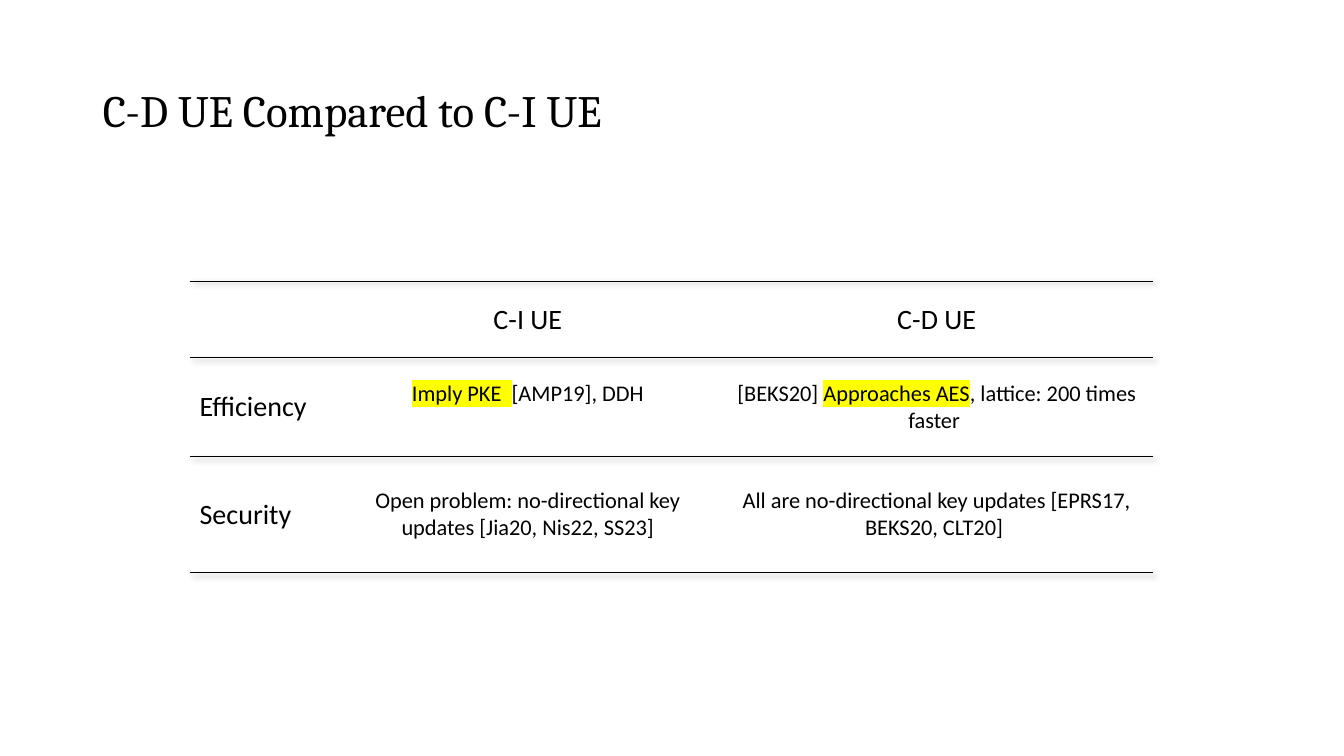
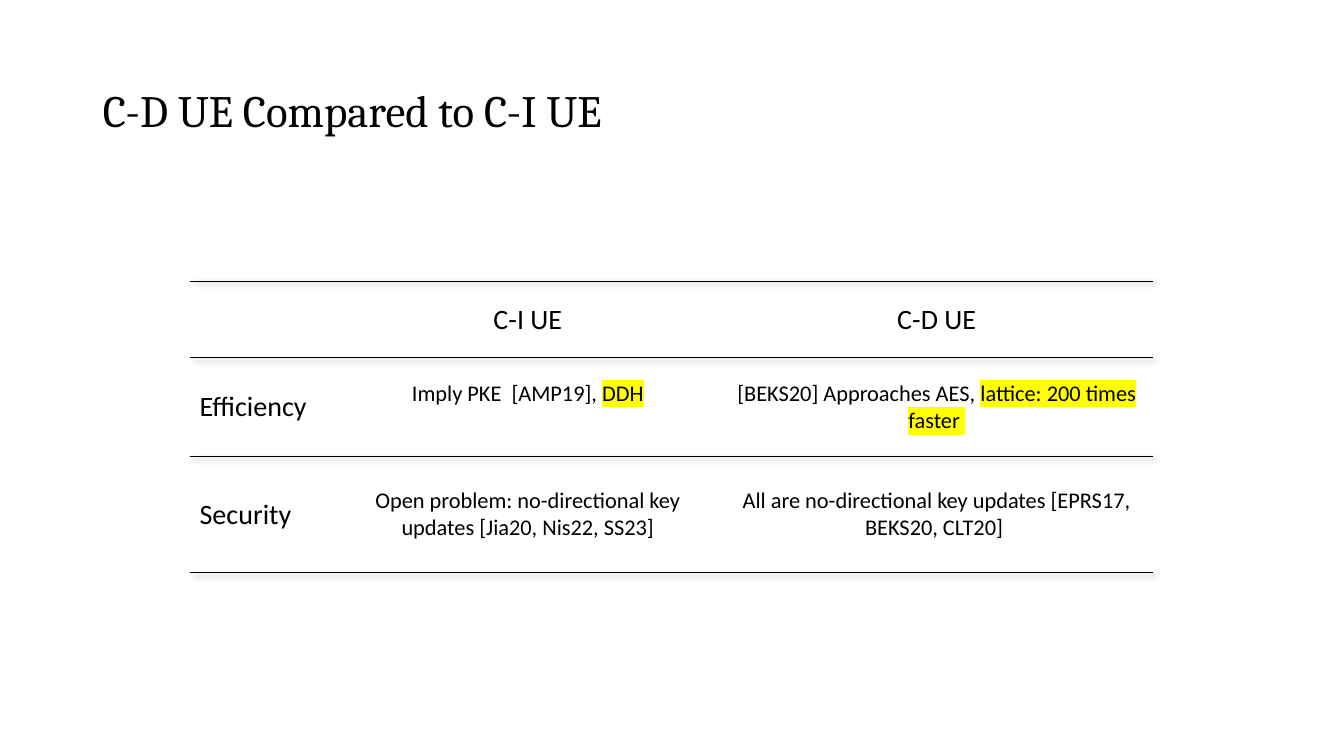
"""Build two slides comparing C-D UE with C-I UE, each with its own highlights."""
from lxml.etree import SubElement
from pptx import Presentation
from pptx.dml.color import RGBColor
from pptx.enum.text import MSO_ANCHOR as Anchor, PP_ALIGN as Align
from pptx.oxml import parse_xml
from pptx.oxml.ns import nsdecls, qn
from pptx.util import Inches, Pt

BLACK = RGBColor(0x00, 0x00, 0x00)
YELLOW = RGBColor(0xFF, 0xFF, 0x00)
TITLE_FONT, BODY_FONT = "Cambria", "Calibri"
NO_TABLE_STYLE = "{2D5ABB26-0587-4C30-8999-92F81FD0307C}"

TITLE = "C-D UE Compared to C-I UE"
ROWS = [
    ("", "C-I UE", "C-D UE"),
    ("Efficiency", "Imply PKE  [AMP19], DDH",
     "[BEKS20] Approaches AES, lattice: 200 times faster "),
    ("Security", "Open problem: no-directional key updates [Jia20, Nis22, SS23]",
     "All are no-directional key updates [EPRS17, BEKS20, CLT20] "),
]
SLIDE_HIGHLIGHTS = [
    ("Imply PKE  ", "Approaches AES"),
    ("DDH", "lattice: 200 times faster "),
]
COLUMN_WIDTHS = (1.45, 3.81, 4.3)
ROW_HEIGHTS = (0.76, 0.98, 1.15)
RULES = {0: ("lnT", "lnB"), 1: ("lnT",), 2: ("lnB",)}
RAISED_CELL, RAISED_MARGIN = (1, 1), 0.32


def add_span(para, text, size, font=BODY_FONT, highlight=None):
    """Append a formatted run to a paragraph."""
    span = para.add_run()
    span.text = text
    span.font.size = Pt(size)
    span.font.color.rgb = BLACK
    if highlight:
        mark = SubElement(span.font._element, qn("a:highlight"))
        SubElement(mark, qn("a:srgbClr"), val=str(highlight))
    span.font.name = font


def split_phrases(text, phrases):
    """Return (piece, is_highlighted) pairs for a text."""
    for phrase in phrases:
        if phrase in text:
            before, _, after = text.partition(phrase)
            pieces = [(before, False), (phrase, True), (after, False)]
            return [piece for piece in pieces if piece[0]]
    return [(text, False)] if text else []


def add_rules(cell, sides):
    """Draw thin black borders on the given sides of a cell."""
    properties = cell._tc.get_or_add_tcPr()
    for side in sides:
        line = SubElement(properties, qn(f"a:{side}"), w=str(Pt(1)))
        fill = SubElement(line, qn("a:solidFill"))
        SubElement(fill, qn("a:srgbClr"), val=str(BLACK))


def add_shadow(table):
    """Give the table a plain style and a soft shadow."""
    properties = table._tbl.tblPr
    properties.find(qn("a:tableStyleId")).text = NO_TABLE_STYLE
    properties.insert(0, parse_xml(
        f'<a:effectLst {nsdecls("a")}><a:outerShdw blurRad="50800" dist="38100" '
        'dir="2700000" algn="tl" rotWithShape="0"><a:prstClr val="black">'
        '<a:alpha val="40000"/></a:prstClr></a:outerShdw></a:effectLst>'))


def add_title(slide):
    """Place and format the slide title."""
    box = slide.shapes.title
    box.left, box.top = Inches(0.92), Inches(0.4)
    box.width, box.height = Inches(11.5), Inches(1.45)
    box.text_frame.vertical_anchor = Anchor.MIDDLE
    para = box.text_frame.paragraphs[0]
    para.alignment = Align.LEFT
    para.line_spacing = 0.9
    add_span(para, TITLE, 32, font=TITLE_FONT)


def add_comparison(slide, phrases):
    """Add the comparison table with the given phrases highlighted."""
    table = slide.shapes.add_table(
        len(ROWS), len(COLUMN_WIDTHS), Inches(1.88), Inches(2.79),
        Inches(sum(COLUMN_WIDTHS)), Inches(sum(ROW_HEIGHTS))).table
    table.first_row = table.horz_banding = False
    add_shadow(table)
    for column, width in zip(table.columns, COLUMN_WIDTHS):
        column.width = Inches(width)
    for row, height in zip(table.rows, ROW_HEIGHTS):
        row.height = Inches(height)
    for row_index, texts in enumerate(ROWS):
        for column_index, text in enumerate(texts):
            cell = table.cell(row_index, column_index)
            add_rules(cell, RULES[row_index])
            cell.fill.background()
            cell.vertical_anchor = Anchor.MIDDLE
            if (row_index, column_index) == RAISED_CELL:
                cell.margin_bottom = Inches(RAISED_MARGIN)
            is_body = row_index > 0 and column_index > 0
            para = cell.text_frame.paragraphs[0]
            para.alignment = Align.CENTER if column_index else Align.LEFT
            for piece, marked in split_phrases(text, phrases):
                add_span(para, piece, 16 if is_body else 20,
                         highlight=YELLOW if marked else None)


def main():
    """Build and save the deck."""
    deck = Presentation()
    deck.slide_width, deck.slide_height = Inches(13.33), Inches(7.5)
    for phrases in SLIDE_HIGHLIGHTS:
        slide = deck.slides.add_slide(deck.slide_layouts[5])
        add_title(slide)
        add_comparison(slide, phrases)
    deck.save("out.pptx")


if __name__ == "__main__":
    main()
